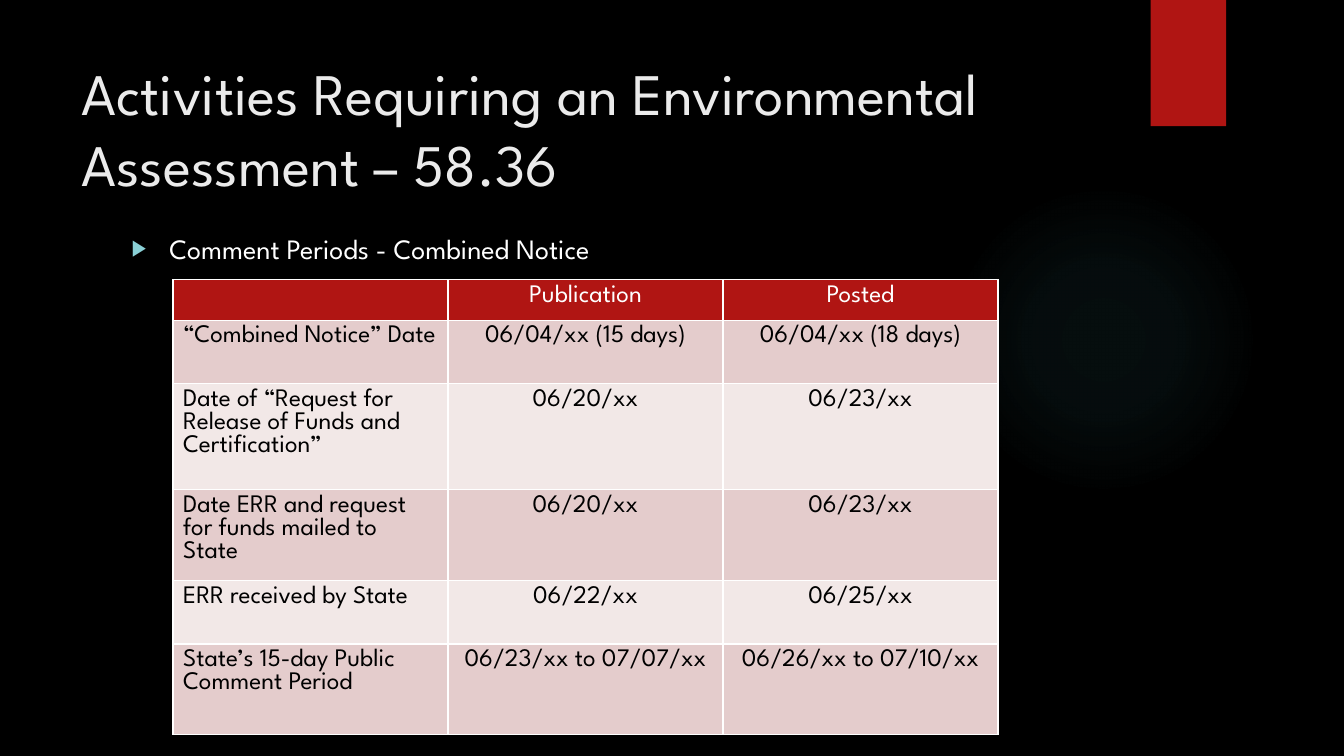
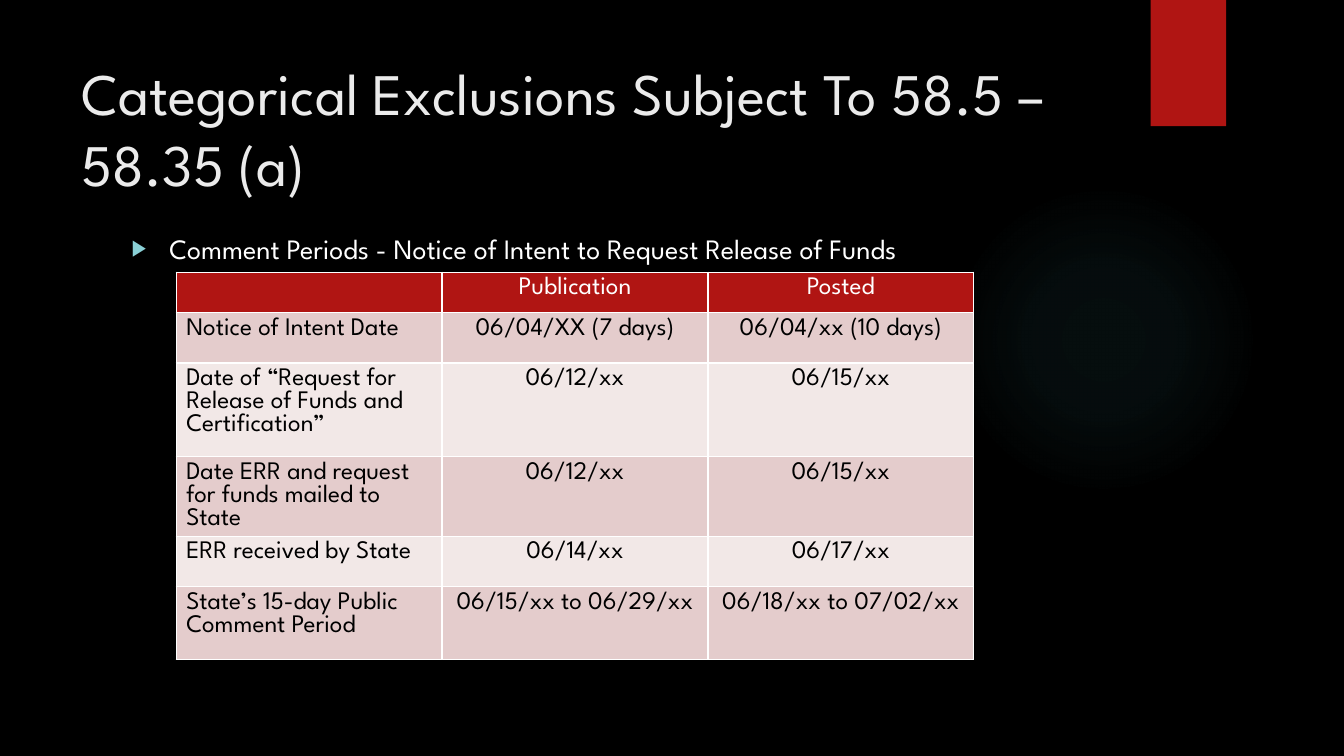
from lxml import etree
from pptx import Presentation
from pptx import util as u
from pptx.dml import color
from pptx.enum import shapes, text
from pptx.oxml import ns, parse_xml

FONT = "League Spartan"
BLACK, WHITE, RED, PALE = "000000", "FFFFFF", "B01513", "EBEBEB"
BANDS = "E4CCCC", "F2E8E7"
GLOW, MARK = "50B9C1", "8AD0D6"
STOPS = (0, 7), (36, 6), (69, 0)
HEAD = "", "Publication", "Posted"
STEPS = (
    "Date of “Request for Release of Funds and Certification”",
    "Date ERR and request for funds mailed to State",
    "ERR received by State",
    "State’s 15-day Public Comment Period",
)
PAGES = [
    dict(
        title="Activities Requiring an Environmental Assessment – 58.36",
        point="Comment Periods - Combined Notice",
        first="“Combined Notice” Date",
        dates=[
            ("06/04/xx (15 days)", "06/04/xx (18 days)"),
            ("06/20/xx", "06/23/xx"),
            ("06/20/xx", "06/23/xx"),
            ("06/22/xx", "06/25/xx"),
            ("06/23/xx to 07/07/xx", "06/26/xx to 07/10/xx"),
        ],
        left=4.36, top=7.05, col=6.93,
        rows=(0.92, 1.6, 2.67, 2.29, 1.6, 2.29),
    ),
    dict(
        title="Categorical Exclusions Subject To 58.5 – 58.35 (a)",
        point="Comment Periods - Notice of Intent to Request Release of Funds",
        first="Notice of Intent Date",
        dates=[
            ("06/04/XX (7 days)", "06/04/xx (10 days)"),
            ("06/12/xx", "06/15/xx"),
            ("06/12/xx", "06/15/xx"),
            ("06/14/xx", "06/17/xx"),
            ("06/15/xx to 06/29/xx", "06/18/xx to 07/02/xx"),
        ],
        left=4.44, top=6.86, col=6.7,
        rows=(0.84, 1.27, 2.36, 2.01, 1.27, 1.83),
    ),
]


def rgb(code):
    return color.RGBColor.from_string(code)


def box(*sides):
    return [u.Cm(side) for side in sides]


def paint(fill, code):
    fill.solid()
    fill.fore_color.rgb = rgb(code)


def write(frame, words, size=18, ink=BLACK, center=False, space=1.0, mark=None):
    frame.word_wrap = True
    para = frame.paragraphs[0]
    para.alignment = text.PP_ALIGN.CENTER if center else text.PP_ALIGN.LEFT
    para.line_spacing = space
    para.space_before = u.Pt(0)
    if mark:
        props = para._p.get_or_add_pPr()
        indent = u.Cm(0.95)
        props.set("marL", str(indent))
        props.set("indent", str(-indent))
        hue = etree.SubElement(props, ns.qn("a:buClr"))
        etree.SubElement(hue, ns.qn("a:srgbClr"), val=mark)
        etree.SubElement(props, ns.qn("a:buSzPct"), val="80000")
        etree.SubElement(props, ns.qn("a:buFont"), typeface="Arial")
        etree.SubElement(props, ns.qn("a:buChar"), char="▶")
    para.font.size = u.Pt(size)
    if words:
        run = para.add_run()
        run.text = words
        font = run.font
        font.name, font.size = FONT, u.Pt(size)
        font.color.rgb = rgb(ink)
    else:
        end = etree.SubElement(para._p, ns.qn("a:endParaRPr"), sz=str(size * 100))
        etree.SubElement(end, ns.qn("a:latin"), typeface=FONT)


def shape(slide, kind, *sides):
    item = slide.shapes.add_shape(kind, *box(*sides))
    item.shadow.inherit = False
    item.line.fill.background()
    return item


def decor(slide):
    glow = shape(slide, shapes.MSO_SHAPE.OVAL, 23.9, 4.65, 7.82, 7.82)
    stops = "".join(
        f'<a:gs pos="{pos * 1000}"><a:srgbClr val="{GLOW}">'
        f'<a:alpha val="{alpha * 1000}"/></a:srgbClr></a:gs>'
        for pos, alpha in STOPS
    )
    fade = parse_xml(
        f'<a:gradFill {ns.nsdecls("a")}><a:gsLst>{stops}</a:gsLst>'
        '<a:path path="circle"><a:fillToRect l="50000" t="50000" '
        'r="50000" b="50000"/></a:path></a:gradFill>'
    )
    glow._element.spPr.find(ns.qn("a:prstGeom")).addnext(fade)
    flag = shape(slide, shapes.MSO_SHAPE.RECTANGLE, 29, 0, 1.9, 3.18)
    paint(flag.fill, RED)


def edge(cell):
    props = cell._tc.get_or_add_tcPr()
    for spot, tag in enumerate(("lnL", "lnR", "lnT", "lnB")):
        line = parse_xml(
            f'<a:{tag} {ns.nsdecls("a")} w="{u.Pt(1)}"><a:solidFill>'
            f'<a:srgbClr val="{WHITE}"/></a:solidFill></a:{tag}>'
        )
        props.insert(spot, line)


def grid(slide, page):
    names = (page["first"],) + STEPS
    data = [HEAD] + [(name,) + pair for name, pair in zip(names, page["dates"])]
    size = page["col"] * len(HEAD), sum(page["rows"])
    table = slide.shapes.add_table(
        len(data), len(HEAD), *box(page["left"], page["top"], *size)
    ).table
    table.first_row = table.horz_banding = False
    for col in table.columns:
        col.width = u.Cm(page["col"])
    for r, row in enumerate(data):
        table.rows[r].height = u.Cm(page["rows"][r])
        for c, words in enumerate(row):
            cell = table.cell(r, c)
            paint(cell.fill, BANDS[(r - 1) % 2] if r else RED)
            edge(cell)
            write(cell.text_frame, words, ink=BLACK if r else WHITE,
                  center=c > 0, space=u.Pt(16.5))


def build(deck, page):
    slide = deck.slides.add_slide(deck.slide_layouts[5])
    decor(slide)
    title = slide.shapes.title
    title.left, title.top, title.width, title.height = box(1.8, 1.27, 26.14, 3.89)
    frame = title.text_frame
    frame.auto_size = text.MSO_AUTO_SIZE.NONE
    frame.vertical_anchor = text.MSO_ANCHOR.MIDDLE
    write(frame, page["title"], size=42, ink=PALE)
    point = slide.shapes.add_textbox(*box(3.07, 5.7, 24.84, 1.3))
    write(point.text_frame, page["point"], size=20, ink=WHITE, mark=MARK)
    grid(slide, page)


def main():
    deck = Presentation()
    deck.slide_width, deck.slide_height = box(33.87, 19.05)
    paint(deck.slide_master.background.fill, BLACK)
    for page in PAGES:
        build(deck, page)
    deck.save("out.pptx")


if __name__ == "__main__":
    main()
